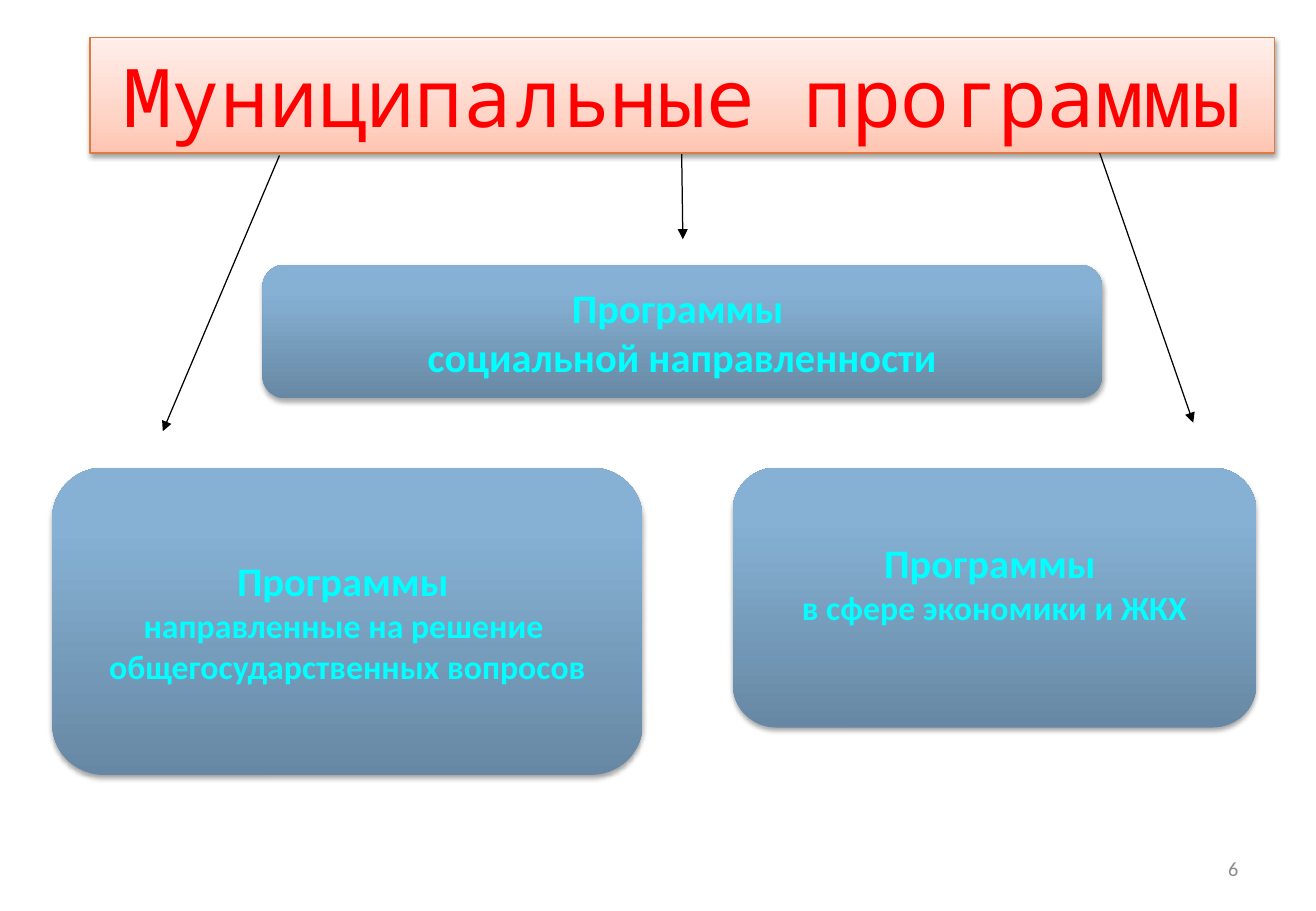
from dataclasses import dataclass

from lxml import etree
from pptx import Presentation
from pptx.dml.color import RGBColor
from pptx.enum import shapes as kinds, text as txt
from pptx.oxml.ns import qn
from pptx.util import Inches, Pt

RED = RGBColor(0xFF, 0x00, 0x00)
CYAN = RGBColor(0x00, 0xFF, 0xFF)
BLACK = RGBColor(0x00, 0x00, 0x00)
GRAY = RGBColor(0x8C, 0x8C, 0x8C)
RUST = RGBColor(0xDC, 0x7C, 0x42)
PEACH = [(0, RGBColor(0xFF, 0xC5, 0xB1)), (35, RGBColor(0xFF, 0xD5, 0xC8)),
         (100, RGBColor(0xFF, 0xEF, 0xEA))]
STEEL = [(0, RGBColor(0x67, 0x88, 0xA4)), (80, RGBColor(0x86, 0xB1, 0xD4)),
         (100, RGBColor(0x86, 0xB2, 0xD7))]


@dataclass
class Box:
    left: float
    top: float
    width: float
    height: float
    lines: list[tuple[str, int]]
    foot: float = 0.05  # bottom inset


@dataclass
class Arrow:
    start: tuple[float, float]
    end: tuple[float, float]


BOXES = [
    Box(0.43, 3.85, 4.86, 2.53, [("Программы ", 24), ("направленные на решение ", 20),
                                 ("общегосударственных вопросов", 20)]),
    Box(2.16, 2.18, 6.91, 1.1, [("Программы ", 24), ("социальной направленности", 24)]),
    Box(6.03, 3.85, 4.31, 2.14, [("Программы ", 24), ("в сфере экономики и ЖКХ", 20)], 0.3),
]
ARROWS = [
    Arrow((2.3, 1.28), (1.34, 3.55)),
    Arrow((5.61, 1.27), (5.62, 1.97)),
    Arrow((9.05, 1.26), (9.82, 3.48)),
]


def place(shape, left: float, top: float, width: float, height: float) -> None:
    shape.left, shape.top = Inches(left), Inches(top)
    shape.width, shape.height = Inches(width), Inches(height)


def blend(shape, stops: list[tuple[int, RGBColor]]) -> None:
    """Fill with a gradient that runs from bottom to top."""
    shape.fill.gradient()
    shape.fill.gradient_angle = 90
    group = next(shape._element.spPr.iter(qn("a:gsLst")))
    group.clear()
    for spot, color in stops:
        stop = etree.SubElement(group, qn("a:gs"), pos=str(spot * 1000))
        etree.SubElement(stop, qn("a:srgbClr"), val=str(color))


def shade(shape, alpha: int, drop: float) -> None:
    """Cast a soft black shadow straight down."""
    shape.shadow.inherit = False
    effects = shape._element.spPr.find(qn("a:effectLst"))
    cast = etree.SubElement(effects, qn("a:outerShdw"), blurRad=str(Pt(3.1)),
                            dist=str(Pt(drop)), dir="5400000", rotWithShape="0")
    color = etree.SubElement(cast, qn("a:srgbClr"), val=str(BLACK))
    etree.SubElement(color, qn("a:alpha"), val=str(alpha * 1000))


def style(para, face: str, size: int, color: RGBColor, align, bold: bool = False) -> None:
    para.alignment = align
    for run in para.runs:
        run.font.name, run.font.size, run.font.bold = face, Pt(size), bold
        run.font.color.rgb = color


def add_title(slide) -> None:
    title = slide.shapes.title
    place(title, 0.74, 0.31, 9.75, 0.95)
    blend(title, PEACH)
    title.line.color.rgb, title.line.width = RUST, Pt(0.75)
    shade(title, 38, 1.6)
    frame = title.text_frame
    frame.text = "Муниципальные программы"
    frame.auto_size = txt.MSO_AUTO_SIZE.NONE
    frame.vertical_anchor = txt.MSO_ANCHOR.MIDDLE
    style(frame.paragraphs[0], "Noto Sans Mono", 48, RED, txt.PP_ALIGN.CENTER)


def add_box(slide, box: Box) -> None:
    shape = slide.shapes.add_shape(
        kinds.MSO_SHAPE.ROUNDED_RECTANGLE, Inches(box.left), Inches(box.top),
        Inches(box.width), Inches(box.height))
    blend(shape, STEEL)
    shape.line.fill.background()
    shade(shape, 35, 1.8)
    frame = shape.text_frame
    frame.word_wrap = False
    frame.vertical_anchor = txt.MSO_ANCHOR.MIDDLE
    frame.margin_bottom = Inches(box.foot)
    frame.text = "\n".join(line for line, _ in box.lines)
    for para, (_, size) in zip(frame.paragraphs, box.lines):
        style(para, "Calibri", size, CYAN, txt.PP_ALIGN.CENTER, True)


def add_arrow(slide, arrow: Arrow) -> None:
    ends = [Inches(n) for n in (*arrow.start, *arrow.end)]
    line = slide.shapes.add_connector(kinds.MSO_CONNECTOR.STRAIGHT, *ends)
    line.line.color.rgb, line.line.width = BLACK, Pt(0.75)
    etree.SubElement(line.line._get_or_add_ln(), qn("a:tailEnd"), type="triangle")
    etree.SubElement(line._element.spPr, qn("a:effectLst"))


def add_number(slide) -> None:
    label = slide.shapes.add_textbox(Inches(7.76), Inches(6.95), Inches(2.53), Inches(0.4))
    frame = label.text_frame
    frame.word_wrap = True
    frame.vertical_anchor = txt.MSO_ANCHOR.MIDDLE
    frame.text = "6"
    style(frame.paragraphs[0], "Calibri", 12, GRAY, txt.PP_ALIGN.RIGHT)


def main() -> None:
    deck = Presentation()
    deck.slide_width, deck.slide_height = Inches(10.83), Inches(7.5)
    slide = deck.slides.add_slide(deck.slide_layouts.get_by_name("Title Only"))
    add_title(slide)
    add_number(slide)
    for box in BOXES:
        add_box(slide, box)
    for arrow in ARROWS:
        add_arrow(slide, arrow)
    deck.save("out.pptx")


if __name__ == "__main__":
    main()
